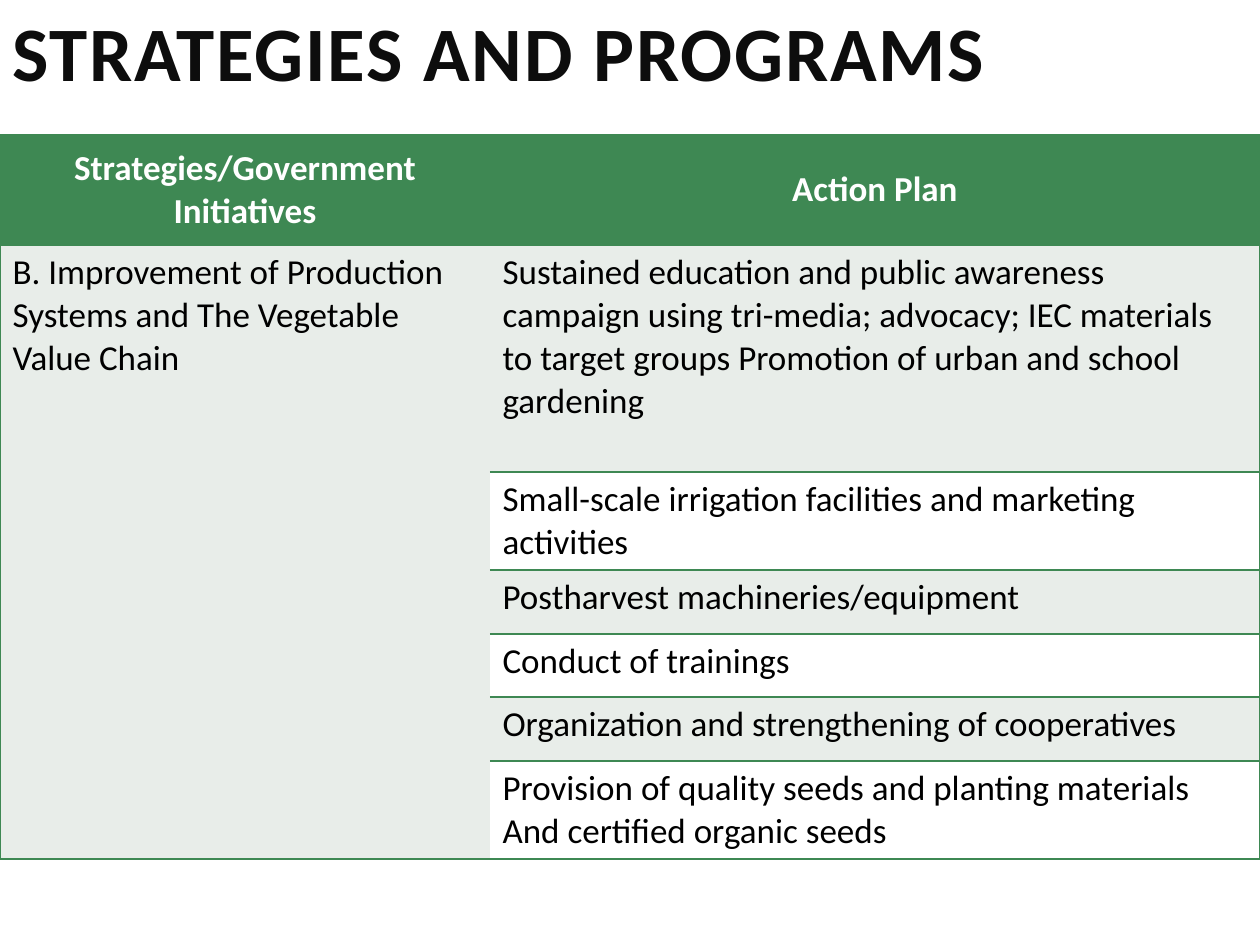
"""Build the strategies and programs slide with its action plan table."""
import pptx
import pptx.util
import pptx.dml.color
import pptx.enum.text
import pptx.oxml
import pptx.oxml.ns
from lxml import etree

RGB = pptx.dml.color.RGBColor
GREEN = RGB(0x3E, 0x88, 0x53)
PALE = RGB(0xE8, 0xED, 0xE9)
WHITE = RGB(0xFF, 0xFF, 0xFF)
BLACK = RGB(0, 0, 0)
INK = RGB(0x0D, 0x0D, 0x0D)
ANCHOR = pptx.enum.text.MSO_ANCHOR
ALIGN = pptx.enum.text.PP_ALIGN

TITLE = "STRATEGIES AND PROGRAMS"
HEADERS = ["Strategies/Government Initiatives", "Action Plan"]
STRATEGY = "B. Improvement of Production Systems and The Vegetable Value Chain"
ACTIONS = [
    "Sustained education and public awareness campaign using tri-media; advocacy; "
    "IEC materials to target groups Promotion of urban and school gardening",
    "Small-scale irrigation facilities and marketing activities",
    "Postharvest machineries/equipment",
    "Conduct of trainings",
    "Organization and strengthening of cooperatives",
    "Provision of quality seeds and planting materials\nAnd certified organic seeds",
]
COLS = [490, 770]
ROWS = [110, 227, 98, 64, 63, 64, 98]
TABLE_TOP = 135

TITLE_FONT = {"size": pptx.util.Pt(44), "bold": True, "name": "Calibri"}
HEAD_FONT = {"size": pptx.util.Pt(20), "bold": True, "name": "Calibri"}
BODY_FONT = {**HEAD_FONT, "bold": False}


def px(n):
    return pptx.util.Emu(round(n * 914400 / 126))


def write(tf, text, font, color, align=ALIGN.LEFT):
    tf.text = text
    for p in tf.paragraphs:
        p.alignment = align
        for r in p.runs:
            for name, value in font.items():
                setattr(r.font, name, value)
            r.font.color.rgb = color


def set_borders(cell, sides):
    tcPr = cell._tc.get_or_add_tcPr()
    for side in "LRTB":
        ln = etree.SubElement(tcPr, pptx.oxml.ns.qn(f"a:ln{side}"), w="12700")
        if side in sides:
            fill = etree.SubElement(ln, pptx.oxml.ns.qn("a:solidFill"))
            etree.SubElement(fill, pptx.oxml.ns.qn("a:srgbClr"), val=str(GREEN))
        else:
            etree.SubElement(ln, pptx.oxml.ns.qn("a:noFill"))


def style_cell(cell, fill, sides):
    set_borders(cell, sides)
    cell.fill.solid()
    cell.fill.fore_color.rgb = fill


def add_title(s):
    tf = s.shapes.add_textbox(0, 0, px(1134), px(118)).text_frame
    tf.word_wrap = True
    tf.vertical_anchor = ANCHOR.MIDDLE
    write(tf, TITLE, TITLE_FONT, INK)
    p = tf.paragraphs[0]
    p.line_spacing = 0.8
    p.runs[0].font._element.set("spc", "100")


def add_plan(s):
    table = s.shapes.add_table(
        len(ROWS), len(COLS), 0, px(TABLE_TOP), px(sum(COLS)), px(sum(ROWS))).table
    table.horz_banding = False
    for col, width in zip(table.columns, COLS):
        col.width = px(width)
    for row, height in zip(table.rows, ROWS):
        row.height = px(height)

    for c, (text, side) in enumerate(zip(HEADERS, "LR")):
        cell = table.cell(0, c)
        style_cell(cell, GREEN, side + "TB")
        cell.vertical_anchor = ANCHOR.MIDDLE
        write(cell.text_frame, text, HEAD_FONT, WHITE, ALIGN.CENTER)

    last = len(ACTIONS)
    for i, text in enumerate(ACTIONS, 1):
        edges = "L" + "T" * (i == 1) + "B" * (i in (1, last))
        style_cell(table.cell(i, 0), PALE, edges)
        cell = table.cell(i, 1)
        style_cell(cell, PALE if i % 2 else WHITE, "RTB")
        write(cell.text_frame, text, BODY_FONT, BLACK)
    strategy = table.cell(1, 0)
    strategy.merge(table.cell(last, 0))
    write(strategy.text_frame, STRATEGY, BODY_FONT, BLACK)


def main():
    prs = pptx.Presentation()
    prs.slide_width, prs.slide_height = px(1260), px(945)
    s = prs.slides.add_slide(prs.slide_layouts[6])
    add_title(s)
    add_plan(s)
    prs.save("out.pptx")


if __name__ == "__main__":
    main()
